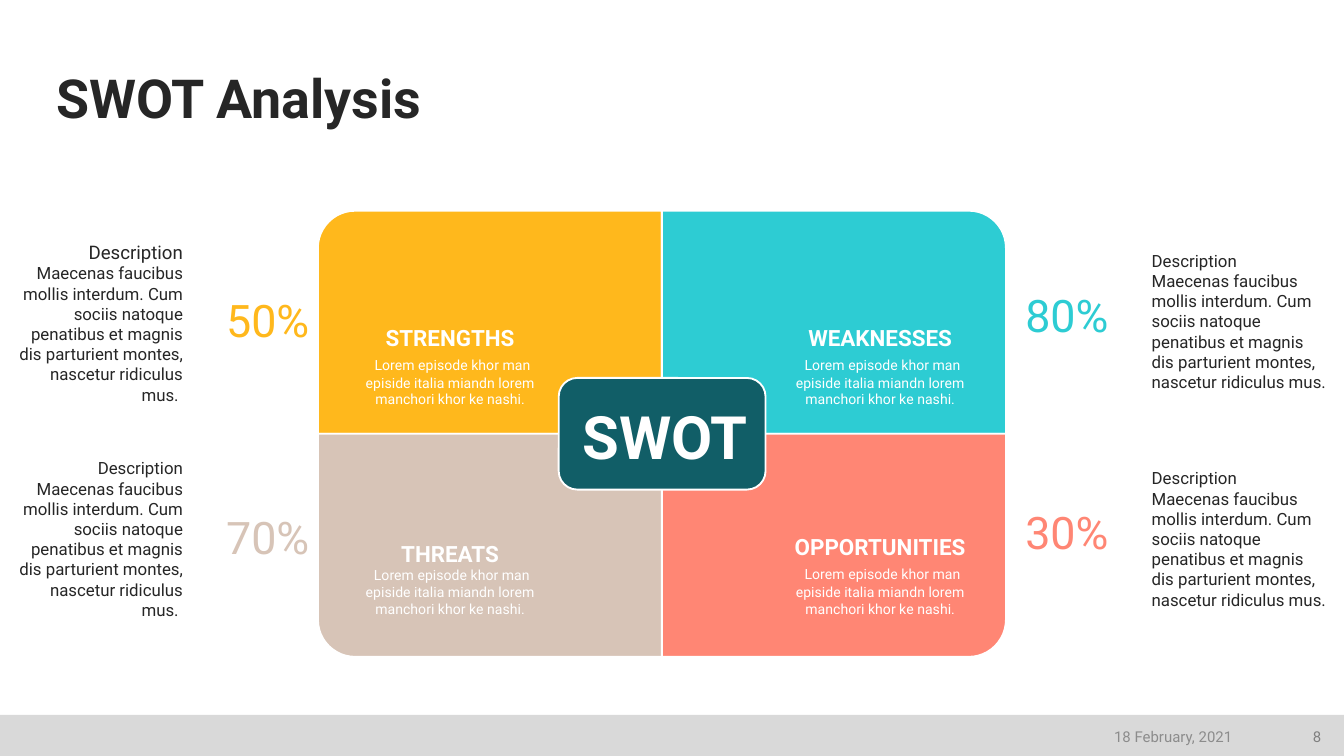
"""Build a SWOT analysis slide with four panels, percentages and descriptions."""
from dataclasses import dataclass

from pptx import Presentation
from pptx.dml.color import RGBColor
from pptx.enum.shapes import MSO_SHAPE
from pptx.enum.text import MSO_ANCHOR, MSO_AUTO_SIZE, PP_ALIGN
from pptx.util import Pt

FONT = "Roboto"
WHITE, DARK = "FFFFFF", "262626"
CENTRE_X, CENTRE_Y = 354.6, 232.4
PANEL_WIDTH, PANEL_HEIGHT = 184.3, 119.5
BLURB = "Lorem episode khor man episide italia miandn lorem manchori khor ke nashi."
DETAIL = ("Maecenas faucibus mollis interdum. Cum sociis natoque penatibus et magnis "
          "dis parturient montes, nascetur ridiculus mus.")


@dataclass
class Frame:
    left: float
    top: float
    width: float
    height: float

    def points(self) -> tuple:
        return Pt(self.left), Pt(self.top), Pt(self.width), Pt(self.height)


@dataclass
class Quadrant:
    heading: str
    share: str
    fill: str
    column: int
    row: int
    rotation: int
    heading_top: float
    share_top: float
    detail_top: float
    lead_size: float = 10.5
    label_size: float = 9


QUADRANTS = [
    Quadrant("STRENGTHS", "50%", "FFB81C", 0, 0, 270, 169.9, 153.4, 133.2, label_size=10),
    Quadrant("WEAKNESSES", "80%", "2DCCD3", 1, 0, 0, 169.9, 150.5, 132.5),
    Quadrant("THREATS", "70%", "D7C4B7", 0, 1, 180, 285.8, 269.3, 249.1, lead_size=7.5),
    Quadrant("OPPORTUNITIES", "30%", "FF8674", 1, 1, 90, 282.2, 267.1, 249.1),
]


def colour(value: str) -> RGBColor:
    """Turn a hex string into a colour."""
    return RGBColor.from_string(value)


def style(para, size: float, value: str, align=PP_ALIGN.LEFT, bold: bool = False) -> None:
    """Set the font and alignment of a paragraph."""
    para.alignment = align
    para.font.name = FONT
    para.font.size = Pt(size)
    para.font.bold = bold
    para.font.color.rgb = colour(value)


def add_block(page, kind, frame: Frame, fill: str, outline: bool = True, rotation: int = 0):
    """Add a filled shape, with a thin white outline if wanted."""
    block = page.shapes.add_shape(kind, *frame.points())
    block.shadow.inherit = False
    block.rotation = rotation
    block.fill.solid()
    block.fill.fore_color.rgb = colour(fill)
    if outline:
        block.line.color.rgb = colour(WHITE)
        block.line.width = Pt(1)
    else:
        block.line.fill.background()
    return block


def add_text_frame(page, frame: Frame, anchor=MSO_ANCHOR.TOP, inset: bool = True):
    """Add a wrapping text box and return its text frame."""
    text = page.shapes.add_textbox(*frame.points()).text_frame
    text.word_wrap = True
    text.vertical_anchor = anchor
    if not inset:
        text.margin_left = text.margin_right = text.margin_top = text.margin_bottom = 0
    return text


def add_label(page, frame: Frame, words: str, size: float, value: str,
              align=PP_ALIGN.LEFT, anchor=MSO_ANCHOR.MIDDLE, bold: bool = False) -> None:
    """Add a one-line text box."""
    para = add_text_frame(page, frame, anchor).paragraphs[0]
    para.text = words
    style(para, size, value, align, bold)


def add_panel(page, quadrant: Quadrant) -> None:
    """Add the panel of a quadrant, with its rounded corner facing outwards."""
    middle_x = CENTRE_X + (quadrant.column - 0.5) * PANEL_WIDTH
    middle_y = CENTRE_Y + (quadrant.row - 0.5) * PANEL_HEIGHT
    width, height = PANEL_WIDTH, PANEL_HEIGHT
    if quadrant.rotation % 180:
        width, height = height, width
    frame = Frame(middle_x - width / 2, middle_y - height / 2, width, height)
    add_block(page, MSO_SHAPE.ROUND_1_RECTANGLE, frame, quadrant.fill,
              rotation=quadrant.rotation)


def add_quadrant_text(page, quadrant: Quadrant) -> None:
    """Add the heading, blurb, percentage and description of a quadrant."""
    on_right = quadrant.column == 1
    frame = Frame(415.4 if on_right else 185, quadrant.heading_top, 112.3, 52.6)
    text = add_text_frame(page, frame)
    heading, blurb = text.paragraphs[0], text.add_paragraph()
    heading.text = quadrant.heading
    style(heading, 12, WHITE, PP_ALIGN.CENTER, bold=True)
    style(blurb, 7.5, WHITE, PP_ALIGN.CENTER)
    for words, size in ((" ", quadrant.lead_size), (BLURB, 7.5)):
        span = blurb.add_run()
        span.text = words
        span.font.size = Pt(size)

    align = PP_ALIGN.LEFT if on_right else PP_ALIGN.RIGHT
    frame = Frame(542.2 if on_right else 93.6, quadrant.share_top, 79.2, 36)
    add_label(page, frame, quadrant.share, 24, quadrant.fill, align, MSO_ANCHOR.TOP)

    frame = Frame(617, quadrant.detail_top, 93.6, 79.2) if on_right else Frame(
        7.9, quadrant.detail_top, 90, 79.2)
    text = add_text_frame(page, frame, MSO_ANCHOR.MIDDLE, inset=False)
    label, detail = text.paragraphs[0], text.add_paragraph()
    label.text = "Description"
    detail.text = DETAIL if on_right else DETAIL + " "
    style(label, quadrant.label_size, DARK, align)
    style(detail, 9, DARK, align)


def add_title(page, words: str) -> None:
    """Place and format the title placeholder."""
    title = page.shapes.title
    title.left, title.top, title.width, title.height = Frame(23, 36, 655.2, 37.4).points()
    text = title.text_frame
    text.text = words
    text.word_wrap = True
    text.auto_size = MSO_AUTO_SIZE.NONE
    text.vertical_anchor = MSO_ANCHOR.BOTTOM
    text.paragraphs[0].line_spacing = 0.9
    style(text.paragraphs[0], 28.8, DARK, bold=True)


def main() -> None:
    """Build and save the deck."""
    deck = Presentation()
    deck.slide_width, deck.slide_height = Pt(720), Pt(405)
    page = deck.slides.add_slide(deck.slide_layouts[5])
    add_title(page, "SWOT Analysis")
    add_block(page, MSO_SHAPE.RECTANGLE, Frame(0, 383, 720, 22), "D9D9D9", outline=False)
    for quadrant in QUADRANTS:
        add_panel(page, quadrant)
    add_block(page, MSO_SHAPE.ROUNDED_RECTANGLE, Frame(299.3, 202.5, 110.8, 59.8), "115E67")
    add_label(page, Frame(302.4, 214.6, 108, 37.4), "SWOT", 32, WHITE,
              PP_ALIGN.CENTER, bold=True)
    for quadrant in QUADRANTS:
        add_quadrant_text(page, quadrant)
    add_label(page, Frame(688.3, 385.2, 26.6, 18.7), "8", 8, "808080", PP_ALIGN.RIGHT)
    add_label(page, Frame(505.4, 385.2, 162, 18.7), "18 February, 2021", 8, "8C8C8C",
              PP_ALIGN.RIGHT)
    deck.save("out.pptx")


if __name__ == "__main__":
    main()
